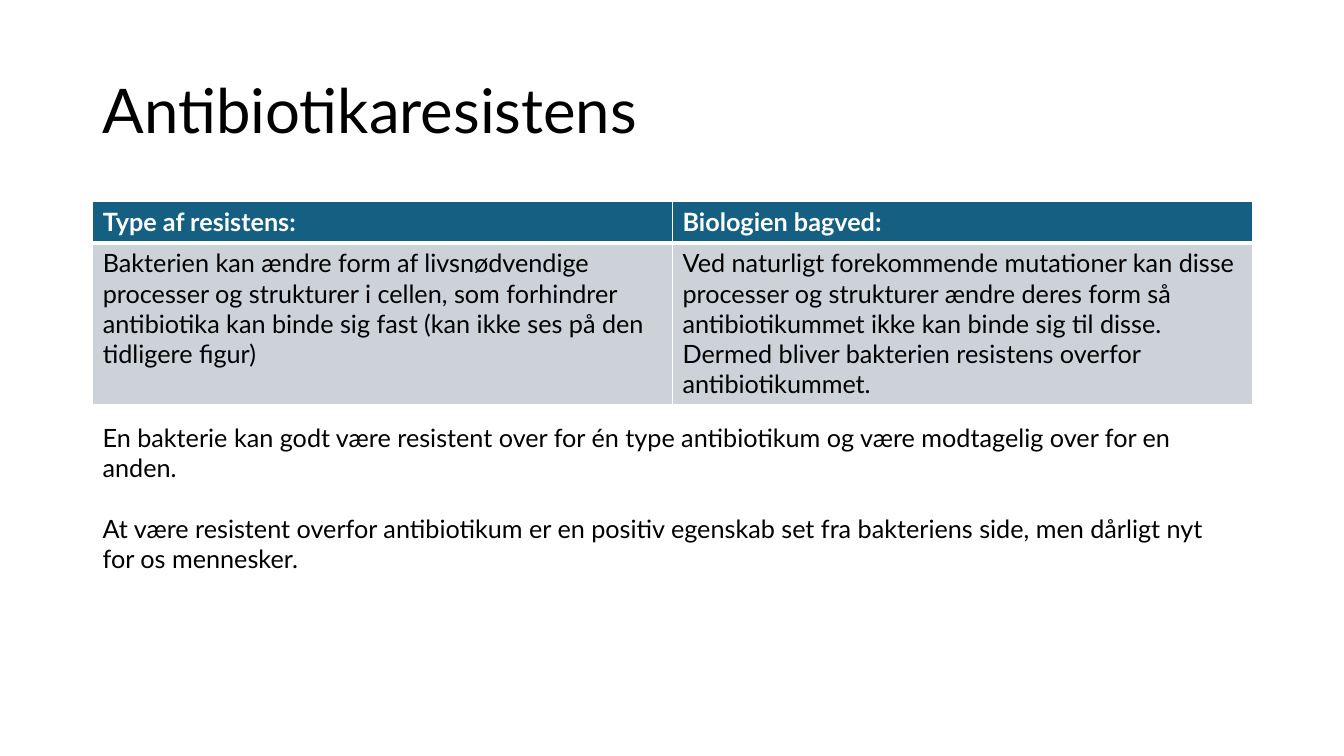
from lxml.etree import SubElement
from pptx import Presentation
from pptx.dml.color import RGBColor
from pptx.enum.text import MSO_ANCHOR
from pptx.oxml.ns import qn
from pptx.util import Inches, Pt

WIDTH, HEIGHT = Inches(13.33), Inches(7.5)
LEFT, CONTENT_WIDTH = Inches(0.92), Inches(11.5)
FONT = "Lato"
BLACK = RGBColor(0x00, 0x00, 0x00)
WHITE = RGBColor(0xFF, 0xFF, 0xFF)
HEADER_BLUE = RGBColor(0x15, 0x60, 0x82)
BODY_GRAY = RGBColor(0xCC, 0xD2, 0xD8)

TITLE = "Antibiotikaresistens"
RESISTANCE_ROWS = [
    ["Type af resistens:", "Biologien bagved:"],
    [
        "Bakterien kan ændre form af livsnødvendige processer og strukturer i cellen, "
        "som forhindrer antibiotika kan binde sig fast (kan ikke ses på den tidligere figur)",
        "Ved naturligt forekommende mutationer kan disse processer og strukturer ændre "
        "deres form så antibiotikummet ikke kan binde sig til disse.\n"
        "Dermed bliver bakterien resistens overfor antibiotikummet.",
    ],
]
ROW_HEIGHTS = [Inches(0.41), Inches(1.6)]
REMARKS = (
    "En bakterie kan godt være resistent over for én type antibiotikum og være "
    "modtagelig over for en anden.\n"
    "At være resistent overfor antibiotikum er en positiv egenskab set fra bakteriens "
    "side, men dårligt nyt for os mennesker."
)


def write_text(frame, text, size=18, color=BLACK, bold=False, line_spacing=1.0, gap=0):
    frame.word_wrap = True
    for index, line in enumerate(text.split("\n")):
        paragraph = frame.add_paragraph() if index else frame.paragraphs[0]
        paragraph.line_spacing = line_spacing
        if index:
            paragraph.space_before = Pt(gap)
        run = paragraph.add_run()
        run.text = line
        run.font.name = FONT
        run.font.size = Pt(size)
        run.font.bold = bold
        run.font.color.rgb = color


def add_text(slide, text, top, height, width=CONTENT_WIDTH, anchor=MSO_ANCHOR.TOP, **text_format):
    shape = slide.shapes.add_textbox(LEFT, top, width, height)
    shape.text_frame.vertical_anchor = anchor
    write_text(shape.text_frame, text, **text_format)


def set_borders(cell, **widths):
    properties = cell._tc.get_or_add_tcPr()
    for side in "LRTB":
        line = SubElement(properties, qn(f"a:ln{side}"), w=str(Pt(widths.get(side, 1))))
        fill = SubElement(line, qn("a:solidFill"))
        SubElement(fill, qn("a:srgbClr"), val=str(WHITE))


def add_resistance_table(slide, top):
    frame = slide.shapes.add_table(
        len(RESISTANCE_ROWS), len(RESISTANCE_ROWS[0]), LEFT, top, CONTENT_WIDTH, sum(ROW_HEIGHTS)
    )
    table = frame.table
    for row_index, row in enumerate(RESISTANCE_ROWS):
        is_header = row_index == 0
        table.rows[row_index].height = ROW_HEIGHTS[row_index]
        for column_index, text in enumerate(row):
            cell = table.cell(row_index, column_index)
            set_borders(cell, **({"B": 3} if is_header else {"T": 3}))
            cell.fill.solid()
            cell.fill.fore_color.rgb = HEADER_BLUE if is_header else BODY_GRAY
            write_text(cell.text_frame, text, color=WHITE if is_header else BLACK, bold=is_header)


def main():
    presentation = Presentation()
    presentation.slide_width, presentation.slide_height = WIDTH, HEIGHT
    slide = presentation.slides.add_slide(presentation.slide_layouts[6])
    add_text(slide, TITLE, Inches(0.4), Inches(1.45), anchor=MSO_ANCHOR.MIDDLE, size=44, line_spacing=0.9)
    add_resistance_table(slide, Inches(2))
    add_text(slide, REMARKS, Inches(4.14), Inches(1.31), width=Inches(11.43), gap=21.6)
    presentation.save("out.pptx")


if __name__ == "__main__":
    main()
